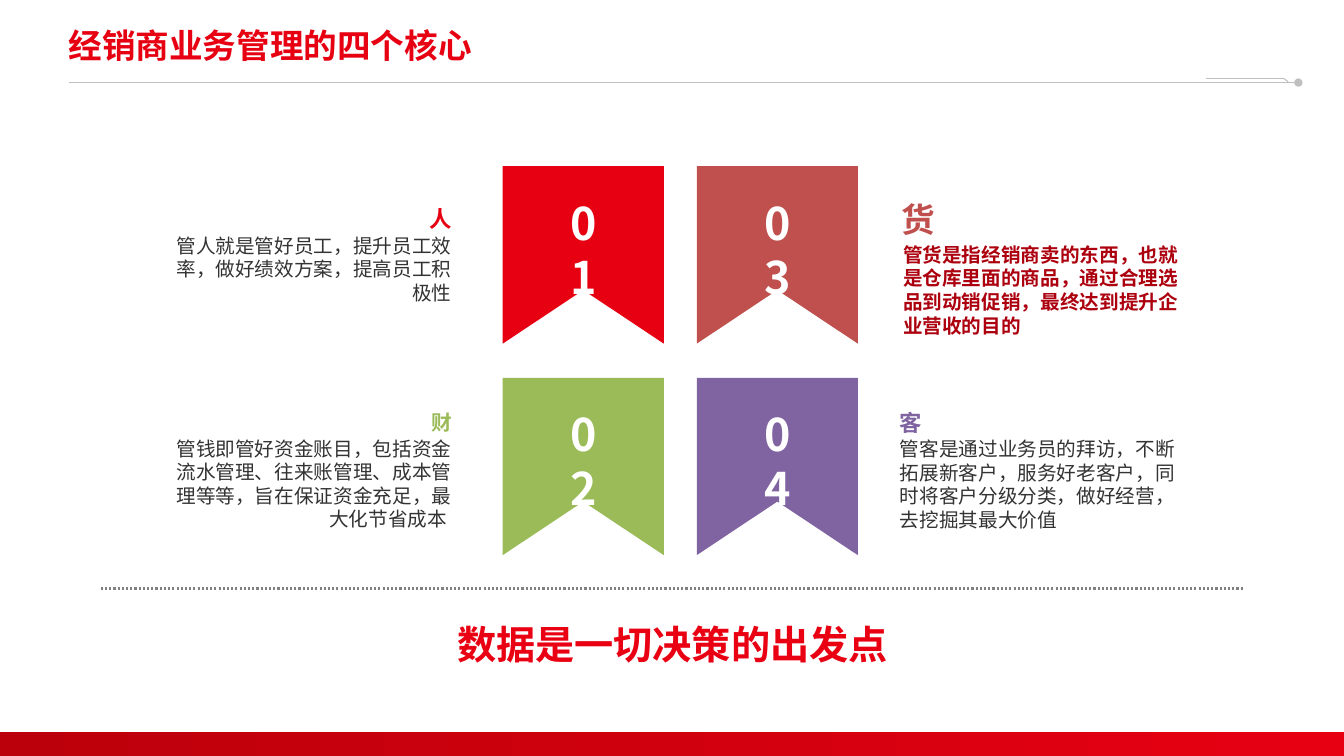
import lxml.etree
import pptx
import pptx.dml.color
import pptx.enum.dml
import pptx.enum.shapes
import pptx.enum.text
import pptx.oxml.ns
import pptx.util

Cm = pptx.util.Cm
Pt = pptx.util.Pt
ALIGN = pptx.enum.text.PP_ALIGN
ANCHOR = pptx.enum.text.MSO_ANCHOR

COLORS = {
    "red": "E60012", "dark_red": "BC000B", "emphasis": "AC000E",
    "closing": "E90012", "brick": "C0504D", "green": "9BBB59",
    "purple": "8064A2", "body": "333333", "rule": "BFBFBF",
    "divider": "808080", "white": "FFFFFF",
}
CJK_FONT = "Noto Sans CJK SC"

RIBBON_LEFT, RIBBON_TOP = 12.67, 4.19
RIBBON_WIDTH, RIBBON_HEIGHT, NOTCH_DEPTH = 4.06, 4.47, 1.35
COLUMN_STEP, ROW_STEP = 4.89, 5.33
NUMBER_WIDTH, NUMBER_HEIGHT, NUMBER_OFFSET = 1.78, 2.96, 0.61

# number, column, row, colour
RIBBONS = [
    ("01", 0, 0, "red"),
    ("03", 1, 0, "brick"),
    ("02", 0, 1, "green"),
    ("04", 1, 1, "purple"),
]

# heading, its place, size, colour; body, its place, colour, bold; alignment
TOPICS = [
    ("人", (10.82, 5.16, 0.56, 0.69), 16, "red",
     "管人就是管好员工，提升员工效率，做好绩效方案，提高员工积极性",
     (4.29, 5.89, 7.09, 1.8), "body", False, ALIGN.RIGHT),
    ("货", (22.73, 5, 0.86, 1.02), 24, "brick",
     "管货是指经销商卖的东西，也就是仓库里面的商品，通过合理选品到动销促销，最终达到提升企业营收的目的",
     (22.76, 6.12, 7.26, 2.39), "emphasis", True, ALIGN.LEFT),
    ("客", (22.68, 10.31, 0.56, 0.69), 16, "purple",
     "管客是通过业务员的拜访，不断拓展新客户，服务好老客户，同时将客户分级分类，做好经营，去挖掘其最大价值",
     (22.68, 11.02, 7.32, 2.39), "body", False, ALIGN.LEFT),
    ("财", (10.87, 10.31, 0.53, 0.64), 14.7, "green",
     "管钱即管好资金账目，包括资金流水管理、往来账管理、成本管理等等，旨在保证资金充足，最大化节省成本 ",
     (4.29, 11, 7.09, 2.39), "body", False, ALIGN.RIGHT),
]


def rgb(name):
    return pptx.dml.color.RGBColor.from_string(COLORS[name])


def add_text(page, text, place, size, color, font=CJK_FONT, bold=True,
             align=ALIGN.LEFT, anchor=ANCHOR.TOP, wrap=True, insets=(0, 0, 0, 0)):
    """Add a one-paragraph text box; place and insets are in centimetres."""
    box = page.shapes.add_textbox(*map(Cm, place))
    frame = box.text_frame
    frame.word_wrap = wrap
    frame.vertical_anchor = anchor
    (frame.margin_left, frame.margin_top,
     frame.margin_right, frame.margin_bottom) = map(Cm, insets)
    frame.text = text
    para = frame.paragraphs[0]
    para.alignment = align
    span = para.runs[0]
    span.font.name = font
    span.font.size = Pt(size)
    span.font.bold = bold
    span.font.color.rgb = rgb(color)
    return para


def add_line(page, start, end, color, width):
    line = page.shapes.add_connector(
        pptx.enum.shapes.MSO_CONNECTOR.STRAIGHT, *map(Cm, start + end))
    line.line.color.rgb = rgb(color)
    line.line.width = Pt(width)
    lxml.etree.SubElement(line._element.spPr, pptx.oxml.ns.qn("a:effectLst"))
    return line


def add_header(page):
    title = add_text(page, "经销商业务管理的四个核心", (1.73, 0.56, 25.6, 1.27), 24, "red",
                     font="Arial", anchor=ANCHOR.MIDDLE, wrap=False,
                     insets=(0, 0.13, 0.25, 0.13))
    title.line_spacing = 0.9
    rule = add_line(page, (1.73, 2.08), (32.72, 2.08), "rule", 0.75)
    tail = lxml.etree.SubElement(rule.line._get_or_add_ln(), pptx.oxml.ns.qn("a:tailEnd"))
    tail.set("type", "oval")
    add_line(page, (30.38, 1.98), (32.36, 1.98), "rule", 0.75)
    add_line(page, (32.36, 1.98), (32.46, 2.06), "rule", 0.75)


def add_footer_band(page, deck):
    top = Cm(18.44)
    band = page.shapes.add_shape(pptx.enum.shapes.MSO_SHAPE.RECTANGLE,
                                 0, top, deck.slide_width, deck.slide_height - top)
    band.shadow.inherit = False
    band.line.fill.background()
    band.fill.gradient()
    band.fill.gradient_angle = 0
    for stop, color in zip(band.fill.gradient_stops, ("dark_red", "red")):
        stop.color.rgb = rgb(color)


def add_ribbon(page, number, column, row, color):
    """Add a swallow-tailed ribbon with its number stacked digit by digit."""
    left = RIBBON_LEFT + column * COLUMN_STEP
    top = RIBBON_TOP + row * ROW_STEP
    right, bottom = left + RIBBON_WIDTH, top + RIBBON_HEIGHT
    middle = left + RIBBON_WIDTH / 2
    outline = page.shapes.build_freeform(Cm(left), Cm(top))
    corners = [(right, top), (right, bottom), (middle, bottom - NOTCH_DEPTH), (left, bottom)]
    outline.add_line_segments([(Cm(x), Cm(y)) for x, y in corners], close=True)
    ribbon = outline.convert_to_shape()
    ribbon.shadow.inherit = False
    ribbon.fill.solid()
    ribbon.fill.fore_color.rgb = rgb(color)
    ribbon.line.fill.background()
    add_text(page, number,
             (middle - NUMBER_WIDTH / 2, top + NUMBER_OFFSET, NUMBER_WIDTH, NUMBER_HEIGHT),
             32, "white", align=ALIGN.CENTER, insets=(0.25, 0.13, 0.25, 0.13))


def add_topic(page, heading, heading_place, heading_size, heading_color,
              body, body_place, body_color, body_bold, align):
    add_text(page, heading, heading_place, heading_size, heading_color,
             align=align, anchor=ANCHOR.MIDDLE, wrap=False)
    add_text(page, body, body_place, 14, body_color, font="Roboto",
             bold=body_bold, align=align)


def main():
    deck = pptx.Presentation()
    deck.slide_width, deck.slide_height = Cm(33.87), Cm(19.05)
    page = deck.slides.add_slide(deck.slide_layouts[6])
    add_footer_band(page, deck)
    add_header(page)
    for ribbon in RIBBONS:
        add_ribbon(page, *ribbon)
    for topic in TOPICS:
        add_topic(page, *topic)
    divider = add_line(page, (2.54, 14.83), (31.32, 14.83), "divider", 1.5)
    divider.line.dash_style = pptx.enum.dml.MSO_LINE.ROUND_DOT
    add_text(page, "数据是一切决策的出发点", (5.97, 15.49, 21.95, 1.45), 28, "closing",
             align=ALIGN.CENTER, insets=(0.25, 0.13, 0.25, 0.13))
    deck.save("out.pptx")


if __name__ == "__main__":
    main()
